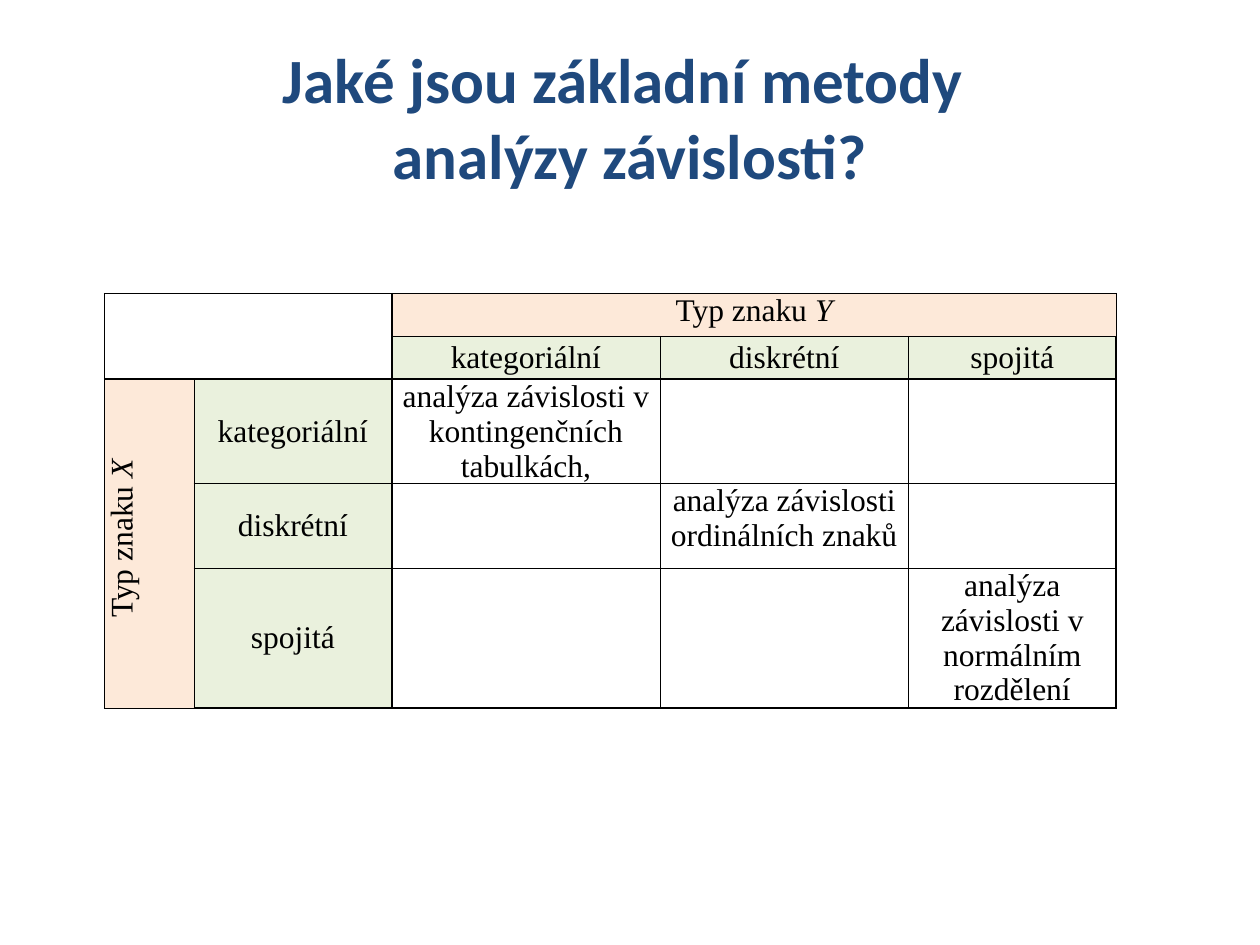
from pptx import Presentation
from pptx.dml.color import RGBColor
from pptx.enum.text import MSO_ANCHOR, PP_ALIGN
from pptx.oxml import parse_xml
from pptx.oxml.ns import nsdecls
from pptx.util import Inches, Pt

CENTER = PP_ALIGN.CENTER
TOP, MIDDLE = MSO_ANCHOR.TOP, MSO_ANCHOR.MIDDLE
NAVY, BLACK, PEACH, GREEN = "1F497D", "000000", "FDE9D9", "EAF1DD"

COLS = [0.71, 1.57, 2.13, 1.97, 1.65]
ROWS = [0.34, 0.34, 0.83, 0.67, 1.11]
TYPES = ["kategoriální", "diskrétní", "spojitá"]
METHODS = [
    "analýza závislosti v kontingenčních tabulkách,",
    "analýza závislosti ordinálních znaků",
    "analýza závislosti v normálním rozdělení",
]
HEAD = 2  # header rows and header columns
THICK_LINES = (0, HEAD, len(COLS))  # grid lines around header and body


def color(hex_string):
    return RGBColor.from_string(hex_string)


def style_font(font, name, size, hex_string):
    font.name, font.size = name, Pt(size)
    font.color.rgb = color(hex_string)


def add_title(slide, left, top, width, height):
    title = slide.shapes.title
    title.left, title.top, title.width, title.height = left, top, width, height
    tf = title.text_frame
    tf.vertical_anchor = MIDDLE
    tf.text = "Jaké jsou základní metody \vanalýzy závislosti?"
    p = tf.paragraphs[0]
    p.alignment = CENTER
    style_font(p.font, "Calibri", 36, NAVY)
    p.font.bold = True


def set_borders(cell, row, col):
    tcPr = cell._tc.get_or_add_tcPr()
    for side, line in (("L", col), ("R", col + 1), ("T", row), ("B", row + 1)):
        width = Pt(1 if line in THICK_LINES else 0.5)
        tcPr.append(parse_xml(
            f'<a:ln{side} {nsdecls("a")} w="{width}"><a:solidFill>'
            f'<a:srgbClr val="{BLACK}"/></a:solidFill></a:ln{side}>'))


def fill_cell(cell, text, fill=None, anchor=MIDDLE, symbol=None):
    if fill:
        cell.fill.solid()
        cell.fill.fore_color.rgb = color(fill)
    cell.vertical_anchor = anchor
    p = cell.text_frame.paragraphs[0]
    p.alignment = CENTER
    p.add_run().text = text
    if symbol:
        r = p.add_run()
        r.text = symbol
        r.font.italic = True
    style_font(p.font, "Times New Roman", 18, BLACK)


def add_method_table(slide, left, top, width, height):
    table = slide.shapes.add_table(
        len(ROWS), len(COLS), left, top, width, height).table
    table.first_row = table.horz_banding = False
    for column, size in zip(table.columns, COLS):
        column.width = Inches(size)
    for row, size in zip(table.rows, ROWS):
        row.height = Inches(size)

    # Plain grid
    for i in range(len(ROWS)):
        for j in range(len(COLS)):
            cell = table.cell(i, j)
            cell.margin_left = cell.margin_right = Inches(0.05)
            cell.margin_top = cell.margin_bottom = 0
            set_borders(cell, i, j)
            cell.fill.background()

    # Merged corner and variable headings
    last = len(COLS) - 1
    table.cell(0, 0).merge(table.cell(1, 1))
    table.cell(0, HEAD).merge(table.cell(0, last))
    table.cell(HEAD, 0).merge(table.cell(last, 0))
    fill_cell(table.cell(0, HEAD), "Typ znaku ", PEACH, TOP, "Y")
    x_head = table.cell(HEAD, 0)
    fill_cell(x_head, "Typ znaku ", PEACH, MIDDLE, "X")
    x_head._tc.get_or_add_tcPr().set("vert", "vert270")
    pPr = x_head.text_frame.paragraphs[0]._p.get_or_add_pPr()
    pPr.set("marL", str(Inches(0.08)))

    # Type headings on both axes, methods on the diagonal
    for k, (kind, method) in enumerate(zip(TYPES, METHODS), HEAD):
        fill_cell(table.cell(1, k), kind, GREEN)
        fill_cell(table.cell(k, 1), kind, GREEN)
        fill_cell(table.cell(k, k), method, anchor=TOP)


def main():
    prs = Presentation()
    prs.slide_width, prs.slide_height = Inches(10), Inches(7.5)
    slide = prs.slides.add_slide(prs.slide_layouts[5])
    add_title(slide, Inches(0.5), Inches(0.3), Inches(9), Inches(1.25))
    add_method_table(slide, Inches(0.83), Inches(2.33),
                     Inches(sum(COLS)), Inches(sum(ROWS)))
    prs.save("out.pptx")


if __name__ == "__main__":
    main()
